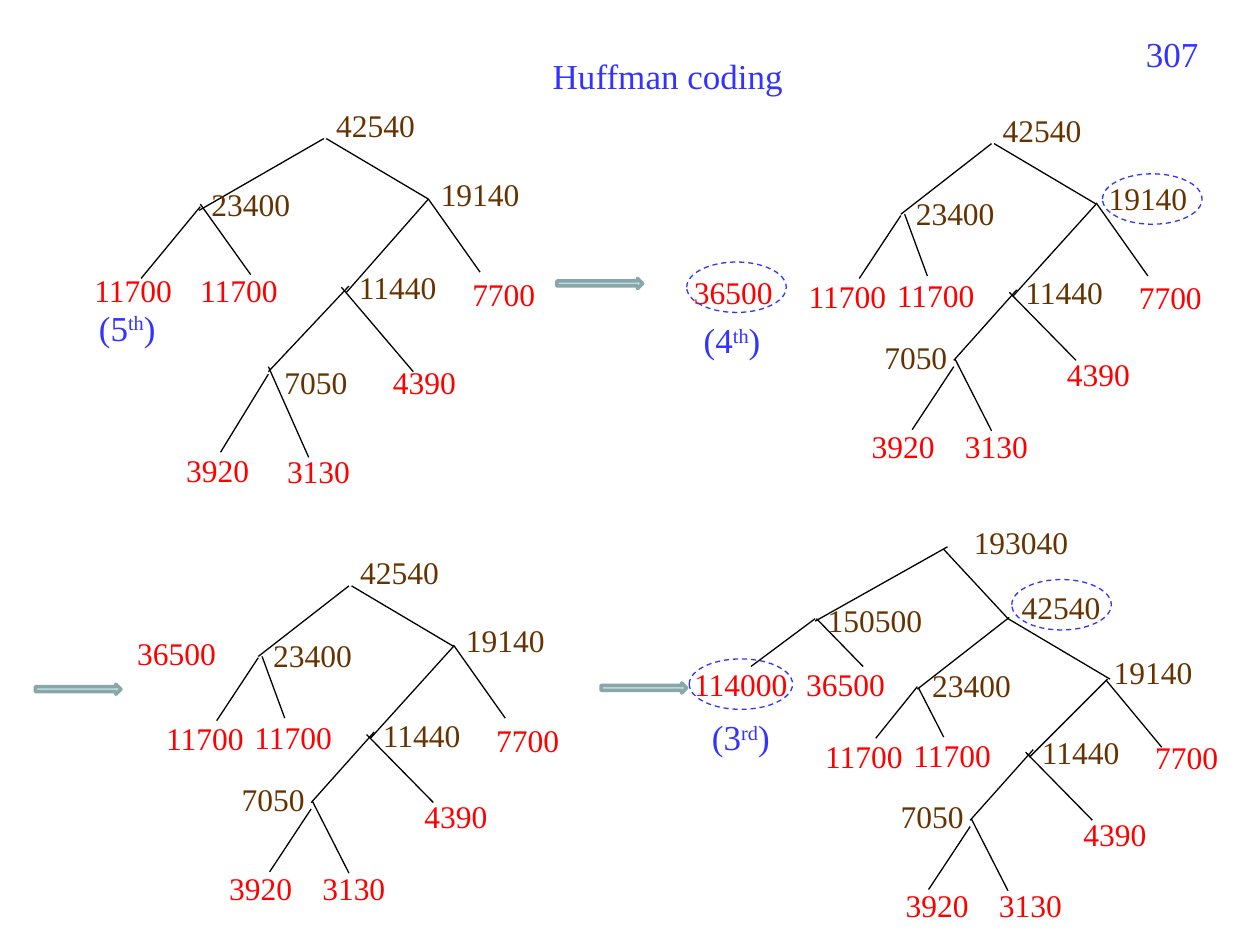
"""Build the Huffman coding slide: four stages of a growing code tree."""
from lxml import etree
from pptx import Presentation
from pptx.dml.color import RGBColor
from pptx.enum.dml import MSO_LINE
from pptx.enum.shapes import MSO_CONNECTOR, MSO_SHAPE
from pptx.enum.text import MSO_ANCHOR, MSO_AUTO_SIZE, PP_ALIGN
from pptx.oxml.ns import qn
from pptx.util import Inches, Pt

STRAIGHT = MSO_CONNECTOR.STRAIGHT
RIGHT_ARROW, OVAL = MSO_SHAPE.RIGHT_ARROW, MSO_SHAPE.OVAL
DASH = MSO_LINE.DASH
TOP = MSO_ANCHOR.TOP
FIT = MSO_AUTO_SIZE.SHAPE_TO_FIT_TEXT
LEFT, CENTER, RIGHT = PP_ALIGN.LEFT, PP_ALIGN.CENTER, PP_ALIGN.RIGHT

BLUE = RGBColor(0x33, 0x33, 0xFF)
RED = RGBColor(0xFF, 0x00, 0x00)
BROWN = RGBColor(0x66, 0x33, 0x00)
BLACK = RGBColor(0x00, 0x00, 0x00)
ARROW_FILL = RGBColor(0xBB, 0xE0, 0xE3)
ARROW_LINE = RGBColor(0x8A, 0xA6, 0xA8)

HEADING = {"name": "Times New Roman", "size": Pt(20), "bold": False}
NODE = {"name": "Times New Roman", "size": Pt(18), "bold": False}
LEAVES = {"114000", "36500", "11700", "7700", "4390", "3920", "3130"}


def write(box, texts, style, color, align, wrap):
    frame = box.text_frame
    settings = {"word_wrap": wrap, "vertical_anchor": TOP, "auto_size": FIT,
                "margin_left": Inches(0.1), "margin_right": Inches(0.1),
                "margin_top": Inches(0.05), "margin_bottom": Inches(0.05)}
    for key, value in settings.items():
        setattr(frame, key, value)
    paragraph = frame.paragraphs[0]
    paragraph.alignment = align
    runs = []
    for text in texts:
        run = paragraph.add_run()
        run.text = text
        for key, value in style.items():
            setattr(run.font, key, value)
        run.font.color.rgb = color
        runs.append(run)
    return runs


prs = Presentation()
prs.slide_width, prs.slide_height = Inches(10), Inches(7.5)
slide = prs.slides.add_slide(prs.slide_layouts[5])
shapes = slide.shapes

title = shapes.title
title.left, title.top = Inches(2.79), Inches(0.38)
title.width, title.height = Inches(5.02), Inches(0.44)
write(title, ["Huffman coding"], HEADING, BLUE, CENTER, True)

page_number = shapes.add_textbox(Inches(7.28), Inches(0.21), Inches(2.33), Inches(0.52))
write(page_number, ["307"], HEADING, BLUE, RIGHT, True)

fifth_nodes = [
    ("42540", 2.57, 0.79), ("23400", 1.58, 1.42), ("19140", 3.4, 1.34),
    ("11700", 0.65, 2.1), ("11700", 1.49, 2.1), ("11440", 2.75, 2.08),
    ("7700", 3.65, 2.13), ("7050", 2.16, 2.83), ("4390", 3.02, 2.83),
    ("3920", 1.38, 3.53), ("3130", 2.18, 3.54),
]
fifth_branches = [
    (2.57, 1.1, 1.58, 1.67), (2.59, 1.1, 3.4, 1.58),
    (1.59, 1.64, 1.12, 2.21), (1.59, 1.62, 1.99, 2.18),
    (3.4, 1.58, 2.75, 2.32), (3.4, 1.58, 3.81, 2.16),
    (2.77, 2.27, 2.13, 2.95), (2.71, 2.28, 3.28, 2.95),
    (2.13, 2.97, 1.75, 3.59), (2.13, 2.91, 2.45, 3.63),
]
fourth_nodes = [
    ("42540", 7.86, 0.83), ("23400", 7.17, 1.49), ("19140", 8.7, 1.37),
    ("3920", 6.82, 3.34), ("3130", 7.56, 3.34),
]
fourth_branches = [
    (7.87, 1.14, 7.15, 1.7), (7.89, 1.14, 8.7, 1.62),
    (7.15, 1.71, 6.82, 2.21), (7.18, 1.7, 7.36, 2.19),
    (8.7, 1.62, 8.04, 2.35), (8.7, 1.61, 9.11, 2.19),
]
third_nodes = [
    ("193040", 7.63, 4.1), ("150500", 6.47, 4.72), ("42540", 8.01, 4.62),
    ("114000", 5.41, 5.23), ("36500", 6.3, 5.23),
    ("23400", 7.3, 5.24), ("19140", 8.74, 5.13),
    ("3920", 7.09, 6.98), ("3130", 7.83, 6.98),
]
third_branches = [
    (7.52, 4.34, 6.47, 4.93), (7.49, 4.36, 8, 4.91),
    (6.47, 4.91, 5.96, 5.29), (6.48, 4.91, 6.85, 5.29),
    (8.01, 4.9, 7.28, 5.47), (8, 4.91, 8.81, 5.39),
    (7.28, 5.45, 6.95, 5.86), (7.29, 5.46, 7.49, 5.85),
    (8.79, 5.39, 8.17, 6.01), (8.78, 5.4, 9.22, 5.93),
]
lower_nodes = [
    ("11700", 6.32, 2.15), ("11700", 7.02, 2.14), ("11440", 8.04, 2.12),
    ("7700", 8.94, 2.16), ("7050", 6.92, 2.63), ("4390", 8.37, 2.77),
]
lower_branches = [
    (8.07, 2.3, 7.57, 2.86), (8.01, 2.32, 8.54, 2.86),
    (7.57, 2.91, 7.24, 3.41), (7.58, 2.85, 7.87, 3.42),
]
tree_parts = [
    (0, 0, fifth_nodes, fifth_branches),
    (0, 0, fourth_nodes, fourth_branches),
    (0, 0, lower_nodes, lower_branches),
    (-5.1, 3.51, fourth_nodes, fourth_branches),
    (-5.1, 3.51, lower_nodes, lower_branches),
    (0, 0, third_nodes, third_branches),
    (0.13, 3.65, lower_nodes, lower_branches),
    (0, 0, [("36500", 5.41, 2.12), ("36500", 0.99, 4.98)], []),
]
for dx, dy, nodes, branches in tree_parts:
    for x1, y1, x2, y2 in branches:
        branch = shapes.add_connector(STRAIGHT, Inches(x1 + dx), Inches(y1 + dy),
                                      Inches(x2 + dx), Inches(y2 + dy))
        branch.line.color.rgb = BLACK
        branch.line.width = Pt(0.75)
        etree.SubElement(branch._element.spPr, qn("a:effectLst"))
    for weight, x, y in nodes:
        node = shapes.add_textbox(Inches(x + dx), Inches(y + dy),
                                  Inches(0.2 + 0.125 * len(weight)), Inches(0.4))
        write(node, [weight], NODE, RED if weight in LEAVES else BROWN, LEFT, False)

for x, y in [(4.42, 2.21), (0.28, 5.43), (4.77, 5.42)]:
    step_arrow = shapes.add_shape(RIGHT_ARROW, Inches(x), Inches(y), Inches(0.68), Inches(0.08))
    step_arrow.shadow.inherit = False
    step_arrow.fill.solid()
    step_arrow.fill.fore_color.rgb = ARROW_FILL
    step_arrow.line.color.rgb = ARROW_LINE
    step_arrow.line.width = Pt(2)

for x, y, width in [(5.45, 2.08, 0.79), (8.75, 1.38, 0.79), (8.03, 4.6, 0.79), (5.47, 5.23, 0.82)]:
    merge_ring = shapes.add_shape(OVAL, Inches(x), Inches(y), Inches(width), Inches(0.4))
    merge_ring.shadow.inherit = False
    merge_ring.fill.background()
    merge_ring.line.color.rgb = BLUE
    merge_ring.line.width = Pt(0.75)
    merge_ring.line.dash_style = DASH

for number, suffix, x, y in [("5", "th", 0.51, 2.38), ("4", "th", 5.31, 2.48), ("3", "rd", 5.38, 5.63)]:
    ordinal = shapes.add_textbox(Inches(x), Inches(y), Inches(1), Inches(0.44))
    runs = write(ordinal, ["(" + number, suffix, ")"], HEADING, BLUE, CENTER, True)
    runs[1].font._element.set("baseline", "30000")

prs.save("out.pptx")
